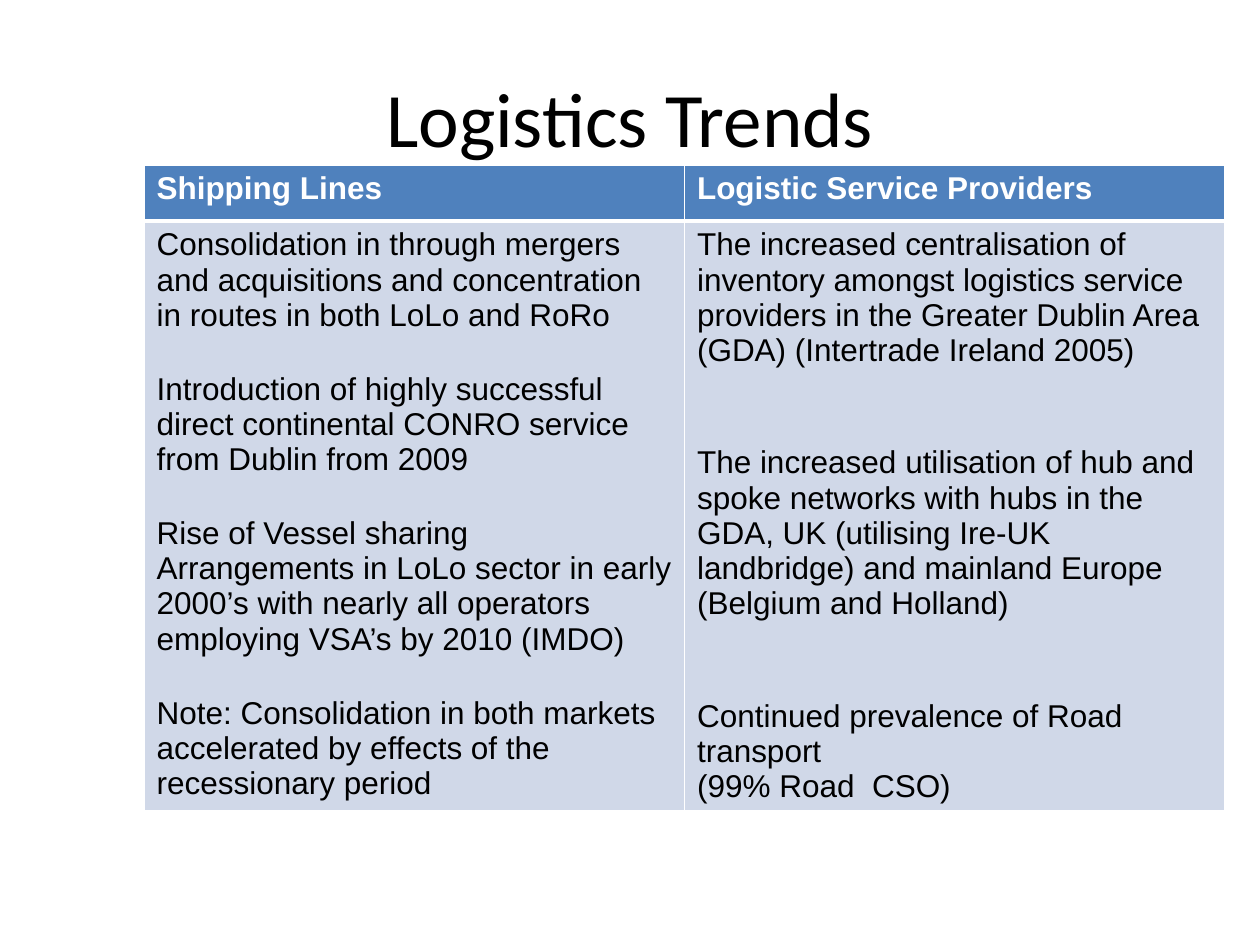
from pptx import Presentation
from pptx import util as u
from pptx.dml.color import RGBColor
from pptx.enum import text
from pptx.oxml import parse_xml
from pptx.oxml.ns import nsdecls

EMU_PER_PX = 914400 / 126
COLORS = {"white": "FFFFFF", "black": "000000", "header": "4F81BD", "body": "D0D8E8"}
GAP = 22  # points, one skipped line

# Each paragraph is (space before, wording)
HEADERS = ["Shipping Lines", "Logistic Service Providers"]
TRENDS = [
    [
        (0, "Consolidation in through mergers and acquisitions and concentration "
            "in routes in both LoLo and RoRo"),
        (GAP, "Introduction of highly successful direct continental CONRO service "
              "from Dublin from 2009"),
        (GAP, "Rise of Vessel sharing Arrangements in LoLo sector in early 2000’s "
              "with nearly all operators employing VSA’s by 2010 (IMDO)"),
        (GAP, "Note: Consolidation in both markets accelerated by effects of the "
              "recessionary period"),
    ],
    [
        (0, "The increased centralisation of inventory amongst logistics service "
            "providers in the Greater Dublin Area (GDA) (Intertrade Ireland 2005)"),
        (2 * GAP, "The increased utilisation of hub and spoke networks with hubs in the "
                  "GDA, UK (utilising Ire-UK landbridge) and mainland Europe "
                  "(Belgium and Holland)"),
        (2 * GAP, "Continued prevalence of Road transport"),
        (0, "(99% Road  CSO)"),
    ],
]


def px(n):
    return u.Emu(round(n * EMU_PER_PX))


class SlideBuilder:
    def __init__(self, prs):
        self.s = prs.slides.add_slide(prs.slide_layouts[5])
        self.title_font = {"name": "Calibri", "size": u.Pt(44)}
        self.header_font = {"name": "Arial", "size": u.Pt(18), "bold": True}
        self.body_font = {"name": "Arial", "size": u.Pt(18), "bold": False}

    def style(self, font, values, color):
        for key, value in values.items():
            setattr(font, key, value)
        font.color.rgb = RGBColor.from_string(COLORS[color])

    def title(self, wording, box):
        sp = self.s.shapes.title
        for key, n in zip(("left", "top", "width", "height"), box):
            setattr(sp, key, px(n))
        tf = sp.text_frame
        tf.vertical_anchor = text.MSO_ANCHOR.MIDDLE
        p = tf.paragraphs[0]
        p.alignment = text.PP_ALIGN.CENTER
        r = p.add_run()
        r.text = wording
        self.style(r.font, self.title_font, "black")

    def borders(self, cell, widths):
        tc_pr = cell._tc.get_or_add_tcPr()
        for i, (side, width) in enumerate(widths.items()):
            tc_pr.insert(i, parse_xml(
                f'<a:ln{side} {nsdecls("a")} w="{u.Pt(width)}"><a:solidFill>'
                f'<a:srgbClr val="{COLORS["white"]}"/></a:solidFill></a:ln{side}>'))

    def cell(self, cell, paragraphs, font, color, fill, widths):
        cell.fill.solid()
        cell.fill.fore_color.rgb = RGBColor.from_string(COLORS[fill])
        self.borders(cell, widths)
        tf = cell.text_frame
        for i, (space, wording) in enumerate(paragraphs):
            p = tf.add_paragraph() if i else tf.paragraphs[0]
            if space:
                p.space_before = u.Pt(space)
            r = p.add_run()
            r.text = wording
            self.style(r.font, font, color)

    def table(self, headers, columns, box, row_heights):
        gf = self.s.shapes.add_table(2, len(headers), *map(px, box))
        table = gf.table
        for row, height in zip(table.rows, row_heights):
            row.height = px(height)
        gf.height = px(box[3])
        thin = dict.fromkeys("LRTB", 1)
        for c, (header, paragraphs) in enumerate(zip(headers, columns)):
            self.cell(table.cell(0, c), [(0, header)], self.header_font,
                      "white", "header", {**thin, "B": 3})
            self.cell(table.cell(1, c), paragraphs, self.body_font,
                      "black", "body", {**thin, "T": 3})


def main():
    prs = Presentation()
    prs.slide_width, prs.slide_height = px(1260), px(945)
    slide = SlideBuilder(prs)

    # Heading
    slide.title("Logistics Trends", (63, 38, 1134, 157))

    # Comparison table; the body row grows to fit its text
    slide.table(HEADERS, TRENDS, (144, 165, 1081, 674), (56, 519))

    prs.save("out.pptx")


if __name__ == "__main__":
    main()
